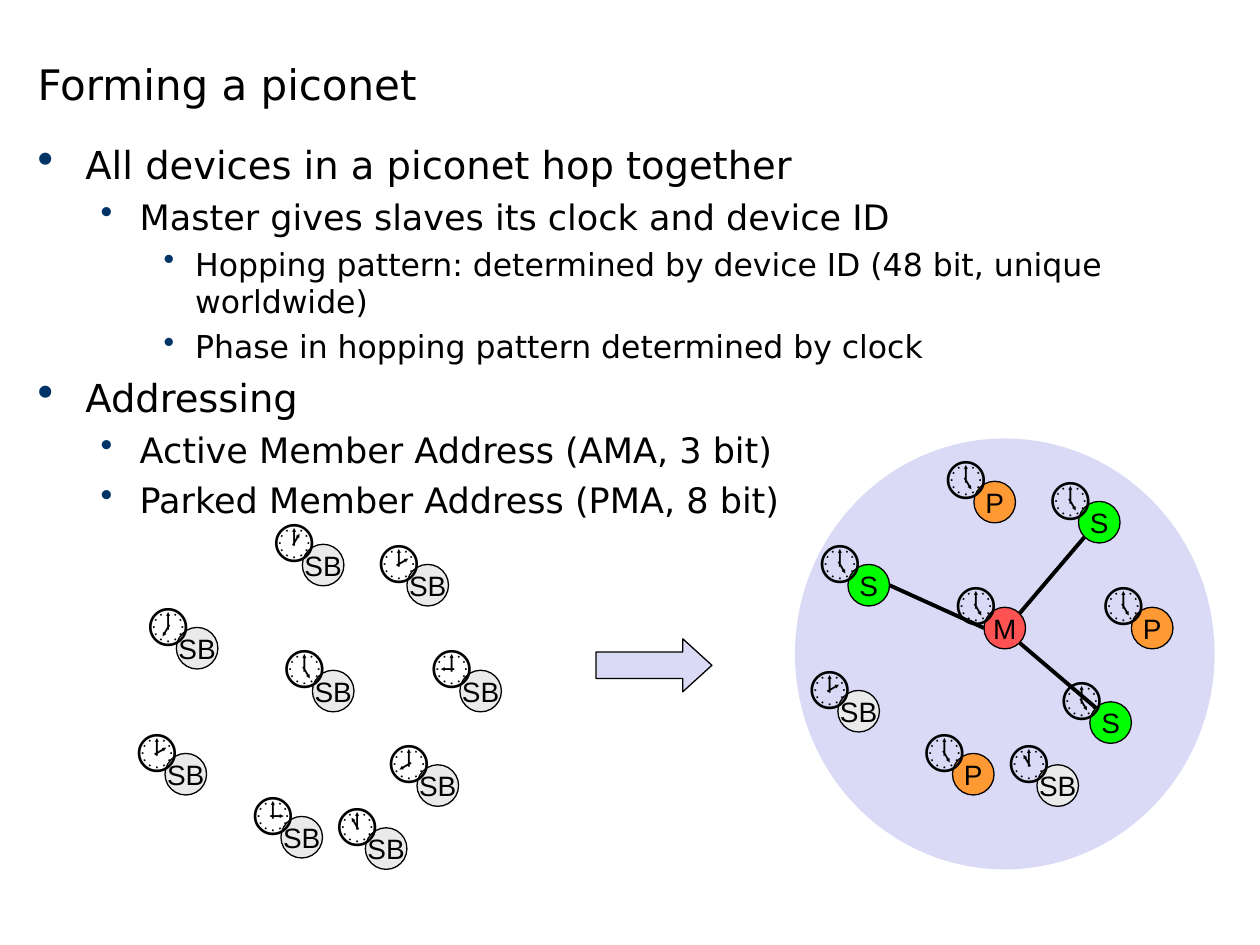
import dataclasses

import lxml.etree
import pptx
import pptx.dml.color
import pptx.enum.shapes
import pptx.enum.text
import pptx.oxml.ns
import pptx.util
from pptx.util import Inches

SHAPE = pptx.enum.shapes.MSO_SHAPE
ANCHOR = pptx.enum.text.MSO_ANCHOR
ALIGN = pptx.enum.text.PP_ALIGN


@dataclasses.dataclass(frozen=True)
class Theme:
    ink: str = "000000"
    bullet: str = "003366"
    piconet: str = "DADAF6"
    master: str = "FF5353"
    slave: str = "00FF00"
    parked: str = "FF9933"
    standby: str = "EAEAEA"
    heading_font: str = "DejaVu Sans"
    diagram_font: str = "Arial"
    title_size: int = 24
    level_sizes: tuple = (22, 20, 18)
    device_size: int = 16
    clock_size: int = 28
    outline: float = 0.75
    link: float = 2.25


THEME = Theme()
ROLE_COLORS = {"M": THEME.master, "S": THEME.slave, "P": THEME.parked, "SB": THEME.standby}
DEVICE_SIZE = 0.33
CLOCK_OFFSET = 0.33
LEVEL_INDENTS = ((0.38, -0.38), (0.81, -0.31), (1.25, -0.25))
SPACE_RATIO = 0.23

OUTLINE = (
    (0, "All devices in a piconet hop together"),
    (1, "Master gives slaves its clock and device ID"),
    (2, "Hopping pattern: determined by device ID (48 bit, unique worldwide)"),
    (2, "Phase in hopping pattern determined by clock"),
    (0, "Addressing"),
    (1, "Active Member Address (AMA, 3 bit)"),
    (1, "Parked Member Address (PMA, 8 bit)"),
)

UNCONNECTED = (
    ("SB", 2.48, 5.32, "🕔"),
    ("SB", 1.4, 4.98, "🕖"),
    ("SB", 2.23, 6.48, "🕒"),
    ("SB", 1.31, 5.98, "🕑"),
    ("SB", 3.23, 4.48, "🕑"),
    ("SB", 3.31, 6.07, "🕗"),
    ("SB", 2.4, 4.32, "🕐"),
    ("SB", 3.65, 5.32, "🕘"),
    ("SB", 2.9, 6.57, "🕚"),
)

MASTER = ("M", 7.81, 4.82, "🕔")
WEST_SLAVE = ("S", 6.73, 4.48, "🕔")
NORTH_SLAVE = ("S", 8.56, 3.98, "🕔")
SOUTH_SLAVE = ("S", 8.65, 5.57, "🕔")
PICONET = (
    MASTER,
    WEST_SLAVE,
    ("P", 7.56, 5.98, "🕔"),
    ("SB", 6.65, 5.48, "🕑"),
    NORTH_SLAVE,
    SOUTH_SLAVE,
    ("P", 7.73, 3.82, "🕔"),
    ("P", 8.98, 4.82, "🕔"),
    ("SB", 8.23, 6.07, "🕚"),
)

DIAGONAL = 0.71
LINKS = (
    (MASTER, (-1, 0), WEST_SLAVE, (1, 0)),
    (MASTER, (DIAGONAL, -DIAGONAL), NORTH_SLAVE, (-DIAGONAL, DIAGONAL)),
    (SOUTH_SLAVE, (-DIAGONAL, -DIAGONAL), MASTER, (DIAGONAL, DIAGONAL)),
)


def rgb(color):
    return pptx.dml.color.RGBColor.from_string(color)


def write_text(paragraph, text, *, size, font, color=THEME.ink, align=None, space_before=None):
    paragraph.alignment = align
    if space_before is not None:
        paragraph.space_before = pptx.util.Pt(space_before)
    run = paragraph.add_run()
    run.text = text
    run.font.size = pptx.util.Pt(size)
    run.font.name = font
    run.font.color.rgb = rgb(color)


def add_bullet(paragraph, level):
    paragraph.level = level
    margin, hanging = LEVEL_INDENTS[level]
    properties = paragraph._p.get_or_add_pPr()
    properties.set("marL", str(Inches(margin)))
    properties.set("indent", str(Inches(hanging)))
    qn = pptx.oxml.ns.qn
    bullet_color = lxml.etree.SubElement(properties, qn("a:buClr"))
    lxml.etree.SubElement(bullet_color, qn("a:srgbClr"), val=THEME.bullet)
    if level == 0:
        lxml.etree.SubElement(properties, qn("a:buSzPct"), val="120000")
    lxml.etree.SubElement(properties, qn("a:buChar"), char="•")


def add_text_frame(slide, left, top, width, height, wrap=True):
    box = slide.shapes.add_textbox(Inches(left), Inches(top), Inches(width), Inches(height))
    box.text_frame.word_wrap = wrap
    return box.text_frame


def add_title(slide):
    title = add_text_frame(slide, 0.2, 0, 6.61, 0.91)
    title.vertical_anchor = ANCHOR.BOTTOM
    write_text(title.paragraphs[0], "Forming a piconet",
               size=THEME.title_size, font=THEME.heading_font)


def add_outline(slide):
    body = add_text_frame(slide, 0.2, 1.07, 9.61, 5.85)
    for index, (level, text) in enumerate(OUTLINE):
        paragraph = body.add_paragraph() if index else body.paragraphs[0]
        size = THEME.level_sizes[level]
        add_bullet(paragraph, level)
        write_text(paragraph, text, size=size, font=THEME.heading_font,
                   space_before=size * SPACE_RATIO if index else None)


def add_figure(slide, kind, left, top, width, height, color, outlined=True):
    figure = slide.shapes.add_shape(
        kind, Inches(left), Inches(top), Inches(width), Inches(height))
    figure.shadow.inherit = False
    figure.fill.solid()
    figure.fill.fore_color.rgb = rgb(color)
    if outlined:
        figure.line.color.rgb = rgb(THEME.ink)
        figure.line.width = pptx.util.Pt(THEME.outline)
    else:
        figure.line.fill.background()
    return figure


def add_device(slide, role, left, top):
    device = add_figure(slide, SHAPE.OVAL, left, top, DEVICE_SIZE, DEVICE_SIZE, ROLE_COLORS[role])
    label = device.text_frame
    label.word_wrap = False
    label.vertical_anchor = ANCHOR.MIDDLE
    write_text(label.paragraphs[0], role, size=THEME.device_size,
               font=THEME.diagram_font, align=ALIGN.CENTER)


def add_clock(slide, device_left, device_top, face):
    clock = add_text_frame(slide, device_left - CLOCK_OFFSET, device_top - CLOCK_OFFSET,
                           0.55, 0.57, wrap=False)
    clock.auto_size = pptx.enum.text.MSO_AUTO_SIZE.SHAPE_TO_FIT_TEXT
    write_text(clock.paragraphs[0], face, size=THEME.clock_size, font=THEME.diagram_font)


def rim_point(device, direction):
    radius = DEVICE_SIZE / 2
    return [Inches(corner + radius * (1 + step)) for corner, step in zip(device[1:3], direction)]


def add_link(slide, start, start_side, end, end_side):
    link = slide.shapes.add_connector(
        pptx.enum.shapes.MSO_CONNECTOR.STRAIGHT,
        *rim_point(start, start_side), *rim_point(end, end_side))
    link.line.color.rgb = rgb(THEME.ink)
    link.line.width = pptx.util.Pt(THEME.link)
    lxml.etree.SubElement(link._element.spPr, pptx.oxml.ns.qn("a:effectLst"))


def main():
    presentation = pptx.Presentation()
    presentation.slide_width = Inches(10)
    presentation.slide_height = Inches(7.5)
    slide = presentation.slides.add_slide(presentation.slide_layouts[6])

    add_title(slide)
    add_outline(slide)
    for role, left, top, _ in UNCONNECTED:
        add_device(slide, role, left, top)
    add_figure(slide, SHAPE.OVAL, 6.31, 3.48, 3.33, 3.42, THEME.piconet, outlined=False)
    for role, left, top, _ in PICONET:
        add_device(slide, role, left, top)
    for link in LINKS:
        add_link(slide, *link)
    forming = add_figure(slide, SHAPE.RIGHT_ARROW, 4.73, 5.07, 0.92, 0.42, THEME.piconet)
    forming.adjustments[1] = 0.55
    for _, left, top, face in UNCONNECTED + PICONET:
        add_clock(slide, left, top, face)

    presentation.save("out.pptx")


if __name__ == "__main__":
    main()
